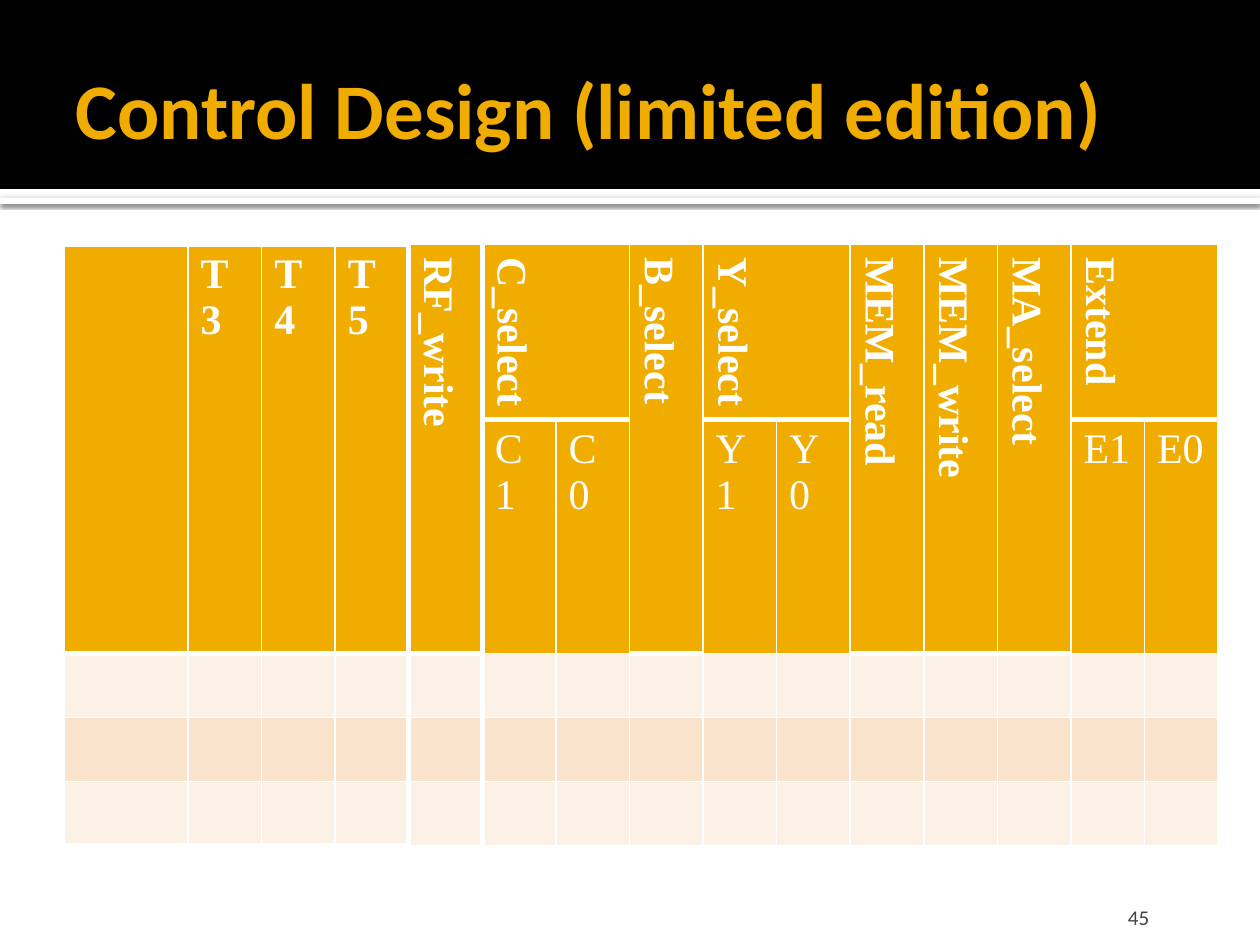
from lxml import etree
from pptx import Presentation
from pptx.dml.color import RGBColor
from pptx.enum.shapes import MSO_SHAPE as SHAPE
from pptx.enum.text import MSO_ANCHOR as ANCHOR, MSO_AUTO_SIZE as AUTO, PP_ALIGN as ALIGN
from pptx.oxml.ns import qn
from pptx.util import Pt

GOLD, WHITE, BLACK = "F0AD00", "FFFFFF", "000000"
BANDS = ["FCF1E7", "F9E3CC", "FCF1E7"]
HEADERS = ["", "T3", "T4", "T5", "RF_write", "C_select", None, "B_select", "Y_select", None,
           "MEM_read", "MEM_write", "MA_select", "Extend", None]
BITS = {5: "C1", 6: "C0", 8: "Y1", 9: "Y0", 13: "E1", 14: "E0"}
WIDTHS = [71.5] + [42.05] * 14
HEIGHTS = [100] + [29.2] * 4


def rgb(value):
    return RGBColor.from_string(value)


def add_xml(parent, tag, **attrs):
    return etree.SubElement(parent, qn(tag), attrs)


class Deck:
    """Holds the style and the current slide of the deck."""

    def __init__(self):
        self.prs = Presentation()
        self.prs.slide_width, self.prs.slide_height = Pt(720), Pt(540)
        self.s = self.prs.slides.add_slide(self.prs.slide_layouts[5])
        self.heading_font, self.table_font = "Calibri", "Times New Roman"

    def run(self, p, text, size, font, color, bold=False):
        r = p.add_run()
        r.text = text
        r.font.size, r.font.name, r.font.bold = Pt(size), font, bold
        r.font.color.rgb = rgb(color)

    def frame(self, tf, anchor, insets):
        tf.word_wrap, tf.auto_size, tf.vertical_anchor = True, AUTO.NONE, anchor
        tf.margin_left, tf.margin_top, tf.margin_right, tf.margin_bottom = map(Pt, insets)

    def bar(self, top, height, color, shadow=False):
        sp = self.s.shapes.add_shape(SHAPE.RECTANGLE, 0, Pt(top), Pt(720), Pt(height))
        sp.shadow.inherit = False
        sp.fill.solid()
        sp.fill.fore_color.rgb = rgb(color)
        sp.line.fill.background()
        if shadow:
            effects = sp._element.spPr.find(qn("a:effectLst"))
            outer = add_xml(effects, "a:outerShdw", blurRad=str(Pt(2.5)), dist=str(Pt(0.8)),
                            dir="5400000", algn="tl", rotWithShape="0")
            add_xml(add_xml(outer, "a:srgbClr", val=BLACK), "a:alpha", val="60000")

    def title(self, text):
        sp = self.s.shapes.title
        self.s.shapes._spTree.append(sp._element)
        sp.left, sp.top, sp.width, sp.height = Pt(36), Pt(12.2), Pt(648), Pt(98.6)
        self.frame(sp.text_frame, ANCHOR.MIDDLE, (7.2, 3.6, 3.6, 3.6))
        p = sp.text_frame.paragraphs[0]
        p.alignment = ALIGN.LEFT
        self.run(p, text, 45, self.heading_font, GOLD, True)

    def page_number(self, text):
        sp = self.s.shapes.add_textbox(Pt(606.2), Pt(509.8), Pt(57.6), Pt(21.6))
        self.frame(sp.text_frame, ANCHOR.BOTTOM, (7.2, 3.6, 7.2, 0))
        p = sp.text_frame.paragraphs[0]
        p.alignment = ALIGN.RIGHT
        self.run(p, text, 12, self.heading_font, "454545")

    def cell(self, cell, fill, text, bold, thick):
        cell.fill.solid()
        cell.fill.fore_color.rgb = rgb(fill)
        p = cell.text_frame.paragraphs[0]
        if text:
            self.run(p, text, 24, self.table_font, WHITE, bold)
        else:
            add_xml(p._p, "a:endParaRPr", sz="2400")
        tc_pr = cell._tc.get_or_add_tcPr()
        if len(text) > 2:
            tc_pr.set("vert", "vert")
        for i, side in enumerate("LRTB"):
            ln = etree.Element(qn("a:ln" + side), w=str(Pt(3 if side in thick else 1)))
            add_xml(add_xml(ln, "a:solidFill"), "a:srgbClr", val=WHITE)
            tc_pr.insert(i, ln)

    def thick_sides(self, row, col):
        rules = {
            "L": col in (0, 4, 5),
            "R": col in (3, 4),
            "T": (row == 0 and col < 4) or (row == 1 and col in BITS),
            "B": row == 0 or (row == 1 and col not in BITS) or (row == 4 and col < 4),
        }
        return [side for side, thick in rules.items() if thick]

    def control_table(self):
        frame = self.s.shapes.add_table(len(HEIGHTS), len(WIDTHS), Pt(36), Pt(139.7),
                                        Pt(sum(WIDTHS)), Pt(sum(HEIGHTS)))
        table = frame.table
        for column, width in zip(table.columns, WIDTHS):
            column.width = Pt(width)
        for row, height in zip(table.rows, HEIGHTS):
            row.height = Pt(height)
        for c, header in enumerate(HEADERS):
            if c not in BITS:
                table.cell(0, c).merge(table.cell(1, c))
            elif header:
                table.cell(0, c).merge(table.cell(0, c + 1))
            texts = [header or "", BITS.get(c, ""), "", "", ""]
            for r, (fill, text) in enumerate(zip([GOLD, GOLD] + BANDS, texts)):
                self.cell(table.cell(r, c), fill, text, r == 0, self.thick_sides(r, c))


def main():
    deck = Deck()
    deck.bar(113, 3.6, WHITE, shadow=True)
    deck.bar(0, 108, BLACK)
    deck.title("Control Design (limited edition)")
    deck.control_table()
    deck.page_number("45")
    deck.prs.save("out.pptx")


if __name__ == "__main__":
    main()
